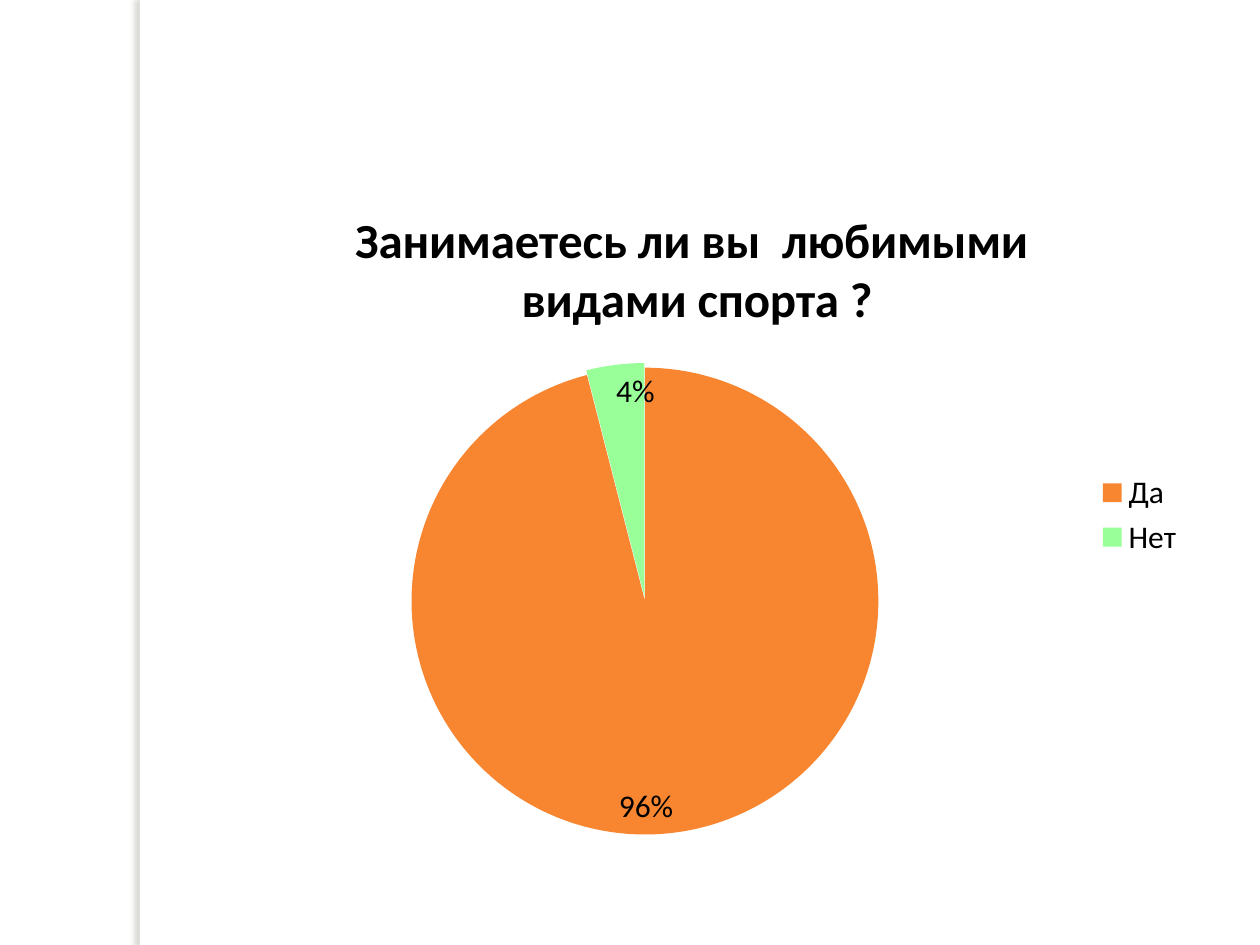
"""Build a slide with a pie chart of a sports survey."""
import lxml.etree
import pptx
import pptx.chart.data
import pptx.dml.color
import pptx.enum.chart
import pptx.enum.shapes
import pptx.oxml
import pptx.oxml.ns
import pptx.util

HUES = {"paper": "FFFFFF", "ink": "000000", "shade": "736F63",
        "yes": "F88631", "no": "99FF99"}
FACE = "Calibri"


def px(count):
    return pptx.util.Emu(round(count * 914400 / 126))


def tint(name):
    return pptx.dml.color.RGBColor.from_string(HUES[name])


def style(font, size=18, bold=False, hue="ink"):
    font.name = FACE
    font.size = pptx.util.Pt(size)
    font.bold = bold
    font.color.rgb = tint(hue)


def write(frame, text, **form):
    run = frame.paragraphs[0].add_run()
    run.text = text
    style(run.font, **form)


class Deck:
    def __init__(self, wide, high):
        self.show = pptx.Presentation()
        self.show.slide_width, self.show.slide_height = px(wide), px(high)
        self.slide = self.show.slides.add_slide(self.show.slide_layouts[6])

    def strip(self, *box):
        bar = self.slide.shapes.add_shape(
            pptx.enum.shapes.MSO_SHAPE.RECTANGLE, *map(px, box))
        bar.fill.solid()
        bar.fill.fore_color.rgb = tint("paper")
        bar.line.fill.background()
        bar.shadow.inherit = False
        glow = bar._element.spPr.find(pptx.oxml.ns.qn("a:effectLst"))
        glow.append(pptx.oxml.parse_xml(
            f'<a:outerShdw {pptx.oxml.ns.nsdecls("a")} blurRad="38100" '
            'dist="38100" dir="10800000" algn="tl" rotWithShape="0">'
            f'<a:srgbClr val="{HUES["shade"]}"><a:alpha val="25000"/>'
            '</a:srgbClr></a:outerShdw>'))

    def pie(self, title, parts, *box):
        data = pptx.chart.data.CategoryChartData(number_format="0%")
        data.categories = [name for name, _, _ in parts]
        data.add_series("Series 1", [value for _, value, _ in parts])
        chart = self.slide.shapes.add_chart(
            pptx.enum.chart.XL_CHART_TYPE.PIE, *map(px, box), data).chart
        style(chart.font)
        chart.has_title = True
        write(chart.chart_title.text_frame, title, size=28, bold=True)
        chart.has_legend = True
        chart.legend.position = pptx.enum.chart.XL_LEGEND_POSITION.RIGHT
        chart.legend.include_in_layout = False
        style(chart.legend.font)
        plot = chart.plots[0]
        plot.vary_by_categories = True
        row = plot.series[0]
        for spot, (_, _, hue) in enumerate(parts):
            fill = row.points[spot].format.fill
            fill.solid()
            fill.fore_color.rgb = tint(hue)
        burst = lxml.etree.Element(pptx.oxml.ns.qn("c:explosion"), val="1")
        row._element.find(pptx.oxml.ns.qn("c:dPt")).addprevious(burst)
        marks = row.data_labels
        marks.show_value = True
        marks.number_format = "0%"
        marks.number_format_is_linked = False
        marks.position = pptx.enum.chart.XL_LABEL_POSITION.INSIDE_END
        style(marks.font)


def main():
    deck = Deck(1260, 945)
    deck.strip(140, 0, 10, 945)
    deck.pie("Занимаетесь ли вы  любимыми  видами спорта ?",
             [("Да", 0.96, "yes"), ("Нет", 0.04, "no")],
             197, 178, 1000, 674)
    deck.show.save("out.pptx")


if __name__ == "__main__":
    main()
